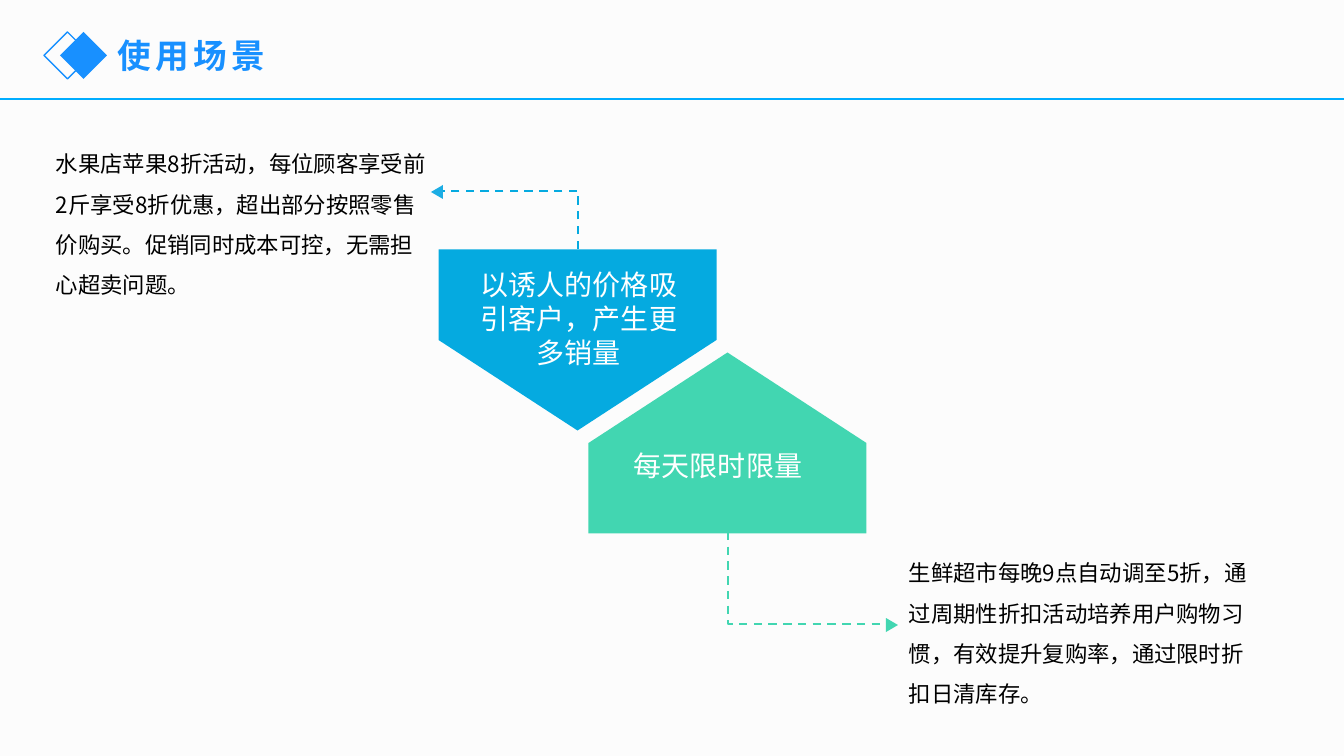
"""Build the usage scenario slide with two linked pentagons."""
from lxml.etree import SubElement
from pptx import Presentation
from pptx.dml.color import RGBColor
from pptx.enum.dml import MSO_LINE
from pptx.enum.shapes import MSO_CONNECTOR, MSO_SHAPE
from pptx.enum.text import MSO_AUTO_SIZE, PP_ALIGN
from pptx.oxml.ns import qn
from pptx.util import Pt

PAPER = RGBColor(0xFC, 0xFC, 0xFC)
RULE = RGBColor(0x00, 0xAD, 0xFF)
BRIGHT = RGBColor(0x18, 0x90, 0xFF)
BLUE = RGBColor(0x05, 0xAA, 0xE0)
TIP = RGBColor(0x1C, 0xAD, 0xE4)
GREEN = RGBColor(0x42, 0xD6, 0xB1)
BLACK = RGBColor(0x00, 0x00, 0x00)
WHITE = RGBColor(0xFF, 0xFF, 0xFF)
FACE = "Noto Sans CJK SC"

TITLE = ("使用场景", (108, 30, 256, 50))
NOTES = [
    ("水果店苹果8折活动，每位顾客享受前2斤享受8折优惠，超出部分按照零售价购买。"
     "促销同时成本可控，无需担心超卖问题。", (46, 132, 398, 166)),
    ("生鲜超市每晚9点自动调至5折，通过周期性折扣活动培养用户购物习惯，"
     "有效提升复购率，通过限时折扣日清库存。", (899, 541, 377, 166)),
]
LABELS = [
    ("每天限时限量", (624, 444, 209, 44), PP_ALIGN.LEFT),
    ("以诱人的价格吸引客户，产生更多销量", (468, 263, 222, 112), PP_ALIGN.CENTER),
]
PLATES = [((637, 304, 181, 278), 270, GREEN), ((487, 201, 181, 278), 90, BLUE)]
LINKS = [((578, 249), (440, 191), BLUE), ((728, 532), (886, 624), GREEN)]
TIPS = [((430, 186, 14, 12), 270, TIP), ((885, 619, 14, 12), 90, GREEN)]
GEMS = [((44, 32, 47, 47), None), ((60, 32, 47, 47), BRIGHT)]


def px(*nums):
    """Turn pixels into EMU."""
    return [round(n * 914400 / 100.8) for n in nums]


def add_form(kind, box, fill, turn=0):
    """Add a flat preset shape, outlined when it has no fill."""
    form = slide.shapes.add_shape(kind, *px(*box))
    form.shadow.inherit = False
    form.rotation = turn
    if fill is None:
        form.fill.background()
        form.line.color.rgb = BRIGHT
        form.line.width = Pt(1)
    else:
        form.fill.solid()
        form.fill.fore_color.rgb = fill
        form.line.fill.background()


def add_line(kind, start, end, color, width):
    """Add a flat connector."""
    line = slide.shapes.add_connector(kind, *px(*start, *end))
    line.line.color.rgb = color
    line.line.width = Pt(width)
    SubElement(line._element.spPr, qn("a:effectLst"))
    return line


def add_text(text, box, size, color, align=PP_ALIGN.LEFT, space=None, bold=False, track=0):
    """Add a wrapped text box of one paragraph."""
    frame = slide.shapes.add_textbox(*px(*box)).text_frame
    frame.word_wrap = True
    frame.auto_size = MSO_AUTO_SIZE.SHAPE_TO_FIT_TEXT
    para = frame.paragraphs[0]
    para.text = text
    para.alignment = align
    para.line_spacing = space
    font = para.font
    font.size, font.bold, font.name = Pt(size), bold, FACE
    font.color.rgb = color
    props = para._p.pPr.find(qn("a:defRPr"))
    props.set("spc", str(track * 100))
    SubElement(props, qn("a:ea")).set("typeface", FACE)


deck = Presentation()
deck.slide_width, deck.slide_height = px(1344, 756)
slide = deck.slides.add_slide(deck.slide_layouts[6])
slide.background.fill.solid()
slide.background.fill.fore_color.rgb = PAPER

add_line(MSO_CONNECTOR.STRAIGHT, (0, 99), (1344, 99), RULE, 1)
for box, fill in GEMS:
    add_form(MSO_SHAPE.DIAMOND, box, fill)
add_text(*TITLE, 24, BRIGHT, bold=True, track=3)
for text, box in NOTES:
    add_text(text, box, 16, BLACK, space=1.5)
for box, turn, fill in PLATES:
    add_form(MSO_SHAPE.PENTAGON, box, fill, turn)
for start, end, color in LINKS:
    link = add_line(MSO_CONNECTOR.ELBOW, start, end, color, 1.5)
    link.line.dash_style = MSO_LINE.DASH
    bend = SubElement(link._element.spPr.prstGeom.find(qn("a:avLst")), qn("a:gd"))
    bend.set("name", "adj1")
    bend.set("fmla", "val 0")
for text, box, align in LABELS:
    add_text(text, box, 20, WHITE, align)
for box, turn, fill in TIPS:
    add_form(MSO_SHAPE.ISOSCELES_TRIANGLE, box, fill, turn)

deck.save("out.pptx")
